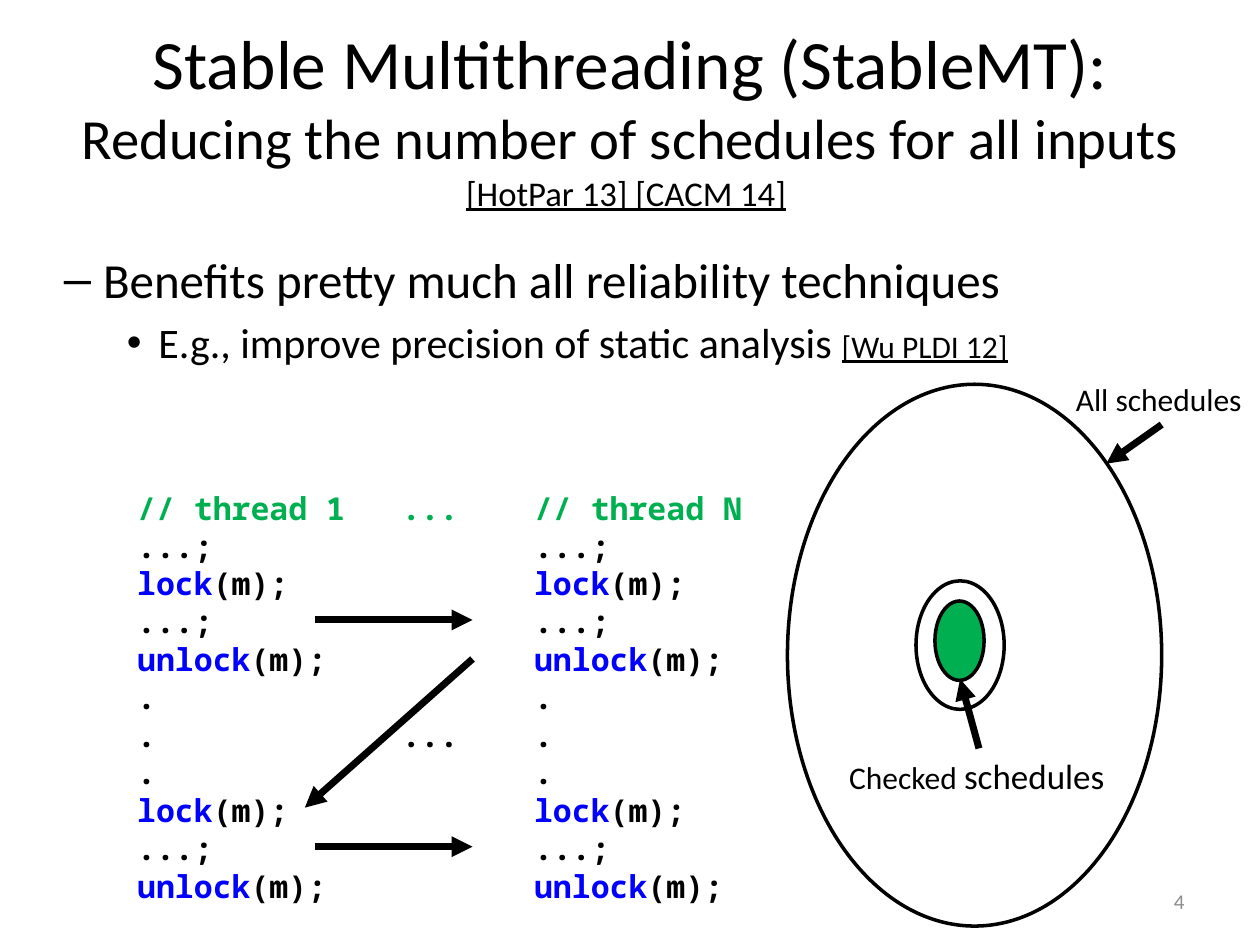
import dataclasses
import typing

import pptx
import pptx.dml.color
import pptx.enum.shapes
import pptx.enum.text
import pptx.oxml.ns
import pptx.util
from lxml import etree

Inches = pptx.util.Inches
Align = pptx.enum.text.PP_ALIGN
Anchor = pptx.enum.text.MSO_ANCHOR
qn = pptx.oxml.ns.qn


@dataclasses.dataclass(frozen=True)
class Theme:
    black: str = "000000"
    white: str = "FFFFFF"
    green: str = "00B050"
    blue: str = "0000FF"
    grey: str = "8C8C8C"
    sans: str = "Calibri"
    mono: str = "Noto Sans Mono"
    head: float = 39.6
    sub: float = 32.4
    cite: float = 19.8
    point: float = 28
    item: float = 24
    label: float = 18
    large: float = 20
    page: float = 12
    thin: float = 2
    thick: float = 4


THEME = Theme()


class Run(typing.NamedTuple):
    text: str
    size: float = THEME.label
    color: str = THEME.black
    line: bool = False
    face: str = THEME.sans
    bold: bool = False


class Para(typing.NamedTuple):
    runs: list[Run]
    align: Align = Align.LEFT
    mark: str = ""
    left: float = 0
    hang: float = 0
    gap: float = 0


class Box(typing.NamedTuple):
    x: float
    y: float
    w: float
    h: float

    def place(self) -> list[int]:
        return [Inches(v) for v in self]


class Oval(typing.NamedTuple):
    box: Box
    fill: str


class Arrow(typing.NamedTuple):
    x1: float
    y1: float
    x2: float
    y2: float


def put(item: typing.Any, form: dict[str, typing.Any]) -> None:
    for name, value in form.items():
        setattr(item, name, value)


def tint(code: str) -> pptx.dml.color.RGBColor:
    return pptx.dml.color.RGBColor.from_string(code)


def write(frame: typing.Any, paras: list[Para], wrap: bool = True,
          anchor: Anchor = Anchor.TOP) -> None:
    put(frame, {"word_wrap": wrap, "vertical_anchor": anchor,
                "auto_size": pptx.enum.text.MSO_AUTO_SIZE.NONE})
    for i, para in enumerate(paras):
        line = frame.paragraphs[0] if i == 0 else frame.add_paragraph()
        put(line, {"alignment": para.align, "space_before": pptx.util.Pt(para.gap)})
        if para.mark:
            props = line._p.get_or_add_pPr()
            props.set("marL", str(Inches(para.left)))
            props.set("indent", str(Inches(-para.hang)))
            font = etree.SubElement(props, qn("a:buFont"))
            font.set("typeface", "Arial")
            etree.SubElement(props, qn("a:buChar")).set("char", para.mark)
        for part in para.runs:
            if part.text == "\v":
                line.add_line_break()
                continue
            run = line.add_run()
            run.text = part.text
            put(run.font, {"name": part.face, "size": pptx.util.Pt(part.size),
                           "bold": part.bold, "underline": part.line})
            run.font.color.rgb = tint(part.color)


def note(slide: typing.Any, box: Box, paras: list[Para], wrap: bool = True,
         anchor: Anchor = Anchor.TOP) -> None:
    write(slide.shapes.add_textbox(*box.place()).text_frame, paras, wrap, anchor)


def ring(slide: typing.Any, oval: Oval) -> None:
    kind = pptx.enum.shapes.MSO_SHAPE.OVAL
    shape = slide.shapes.add_shape(kind, *oval.box.place())
    shape.shadow.inherit = False
    shape.fill.solid()
    shape.fill.fore_color.rgb = tint(oval.fill)
    shape.line.color.rgb = tint(THEME.black)
    shape.line.width = pptx.util.Pt(THEME.thin)


def point(slide: typing.Any, arrow: Arrow) -> None:
    kind = pptx.enum.shapes.MSO_CONNECTOR.STRAIGHT
    link = slide.shapes.add_connector(kind, *[Inches(v) for v in arrow])
    link.line.color.rgb = tint(THEME.black)
    link.line.width = pptx.util.Pt(THEME.thick)
    etree.SubElement(link.line._get_or_add_ln(), qn("a:tailEnd")).set("type", "triangle")
    etree.SubElement(link._element.spPr, qn("a:effectLst"))


def code(left: str, right: str, color: str = THEME.black) -> Para:
    runs = []
    for text in (left.ljust(21), right):
        word, mark, rest = text.partition("(")
        if mark:
            runs.append(Run(word, color=THEME.blue, face=THEME.mono, bold=True))
            text = mark + rest
        runs.append(Run(text, color=color, face=THEME.mono, bold=True))
    return Para(runs)


def main() -> None:
    deck = pptx.Presentation()
    put(deck, {"slide_width": Inches(10), "slide_height": Inches(7.5)})
    slide = deck.slides.add_slide(deck.slide_layouts[5])

    title = slide.shapes.title
    put(title, dict(zip(("left", "top", "width", "height"),
                        Box(0.5, 0.3, 9, 1.25).place())))
    write(title.text_frame, [Para([
        Run("Stable Multithreading (StableMT):", THEME.head), Run("\v"),
        Run("Reducing the number of schedules for all inputs ", THEME.sub),
        Run("[HotPar 13] [CACM 14]", THEME.cite, line=True),
        Run(" ", THEME.cite)], Align.CENTER)], anchor=Anchor.MIDDLE)

    ring(slide, Oval(Box(6.25, 3.05, 2.97, 4.3), THEME.white))
    point(slide, Arrow(9.22, 3.37, 8.78, 3.68))
    note(slide, Box(8.44, 2.97, 1.56, 0.4), [Para([Run("All schedules")])], False)
    note(slide, Box(-0.09, 1.93, 9, 1.1), [
        Para([Run("Benefits pretty much all reliability techniques", THEME.point)],
             mark="–", left=0.81, hang=0.31),
        Para([Run("E.g., improve precision of static analysis ", THEME.item),
              Run("[Wu PLDI 12]", line=True)],
             mark="•", left=1.25, hang=0.25, gap=4.8)])
    note(slide, Box(7.17, 6.95, 2.33, 0.4),
         [Para([Run("4", THEME.page, THEME.grey)], Align.RIGHT)], anchor=Anchor.MIDDLE)

    block = [code(text, text) for text in ("lock(m);", "...;", "unlock(m);")]
    dot = code(".", ".")
    note(slide, Box(0.99, 3.83, 5.08, 3.43), [
        code("// thread 1   ...", "// thread N", THEME.green), code("...;", "...;"),
        *block, dot, code(".             ...", "."), dot, *block], False)

    ring(slide, Oval(Box(7.27, 4.61, 0.7, 1.02), THEME.white))
    point(slide, Arrow(7.77, 5.94, 7.62, 5.39))
    note(slide, Box(6.64, 5.94, 2.25, 0.44),
         [Para([Run("Checked "), Run("schedules", THEME.large)])], False)
    ring(slide, Oval(Box(7.42, 4.77, 0.39, 0.63), THEME.green))
    for arrow in (Arrow(2.5, 4.92, 3.75, 4.92), Arrow(3.75, 5.23, 2.42, 6.41),
                  Arrow(2.5, 6.72, 3.75, 6.72)):
        point(slide, arrow)
    deck.save("out.pptx")


if __name__ == "__main__":
    main()
